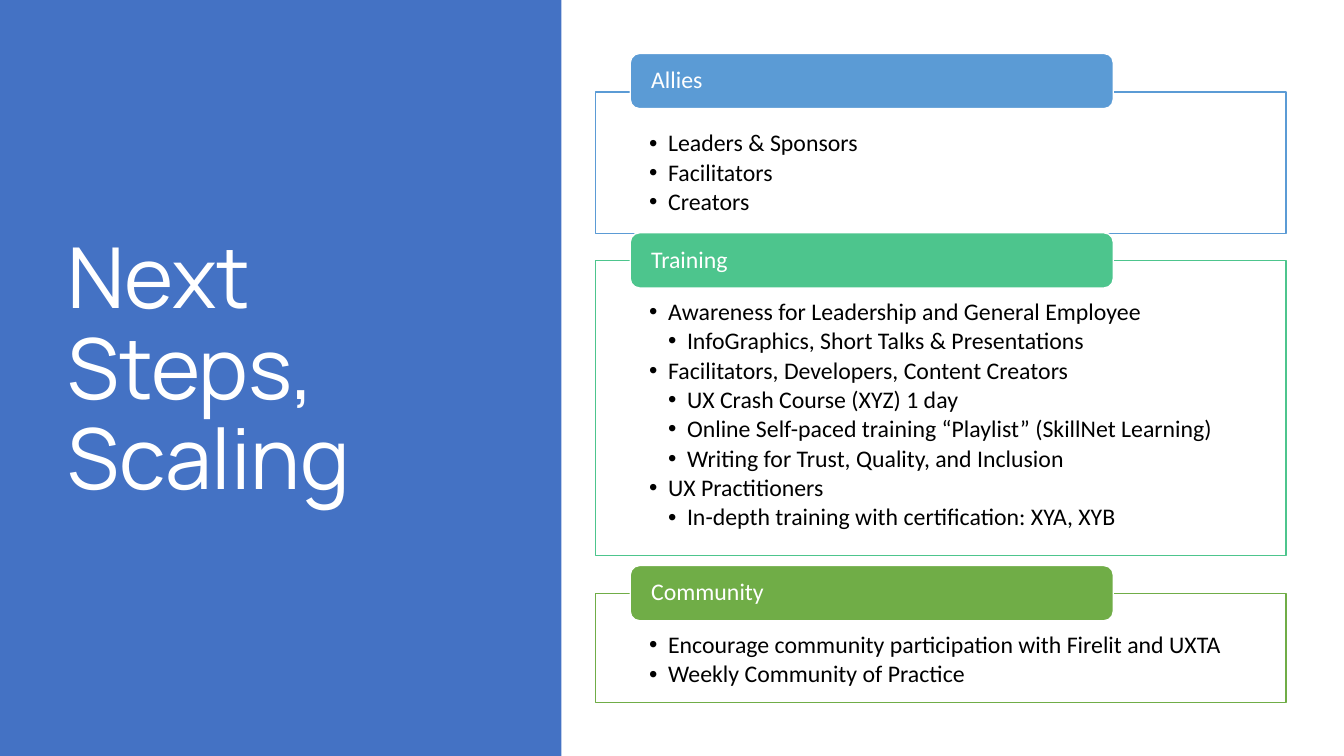
from lxml.etree import SubElement
from pptx import Presentation
from pptx.dml.color import RGBColor
from pptx.enum.shapes import MSO_SHAPE as Shape
from pptx.enum.text import MSO_ANCHOR as Anchor, PP_ALIGN as Align
from pptx.oxml.ns import qn
from pptx.util import Pt

WHITE, BLACK, BLUE = "FFFFFF", "000000", "4472C4"
PANEL_LEFT, PANEL_WIDTH = 425.5, 493.2
TAB_LEFT, TAB_WIDTH, TAB_HEIGHT = 450.2, 345, 39.4
BULLET_INDENT = 13.5

SECTIONS = [
    ("Allies", "5B9BD5", 38.2, 65.7, 101.3, [
        (1, "Leaders & Sponsors"),
        (1, "Facilitators"),
        (1, "Creators"),
    ]),
    ("Training", "4DC58D", 166.3, 186, 210.8, [
        (1, "Awareness for Leadership and General Employee"),
        (2, "InfoGraphics, Short Talks & Presentations"),
        (1, "Facilitators, Developers, Content Creators"),
        (2, "UX Crash Course (XYZ) 1 day"),
        (2, "Online Self-paced training “Playlist” (SkillNet Learning)"),
        (2, "Writing for Trust, Quality, and Inclusion"),
        (1, "UX Practitioners"),
        (2, "In-depth training with certification: XYA, XYB"),
    ]),
    ("Community", "70AD47", 404, 424, 77.8, [
        (1, "Encourage community participation with Firelit and UXTA"),
        (1, "Weekly Community of Practice"),
    ]),
]


def color(value):
    return RGBColor.from_string(value)


def add_box(slide, kind, left, top, width, height, fill, line=None):
    shape = slide.shapes.add_shape(kind, Pt(left), Pt(top), Pt(width), Pt(height))
    shape.shadow.inherit = False
    shape.fill.solid()
    shape.fill.fore_color.rgb = color(fill)
    if line:
        shape.line.color.rgb = color(line)
        shape.line.width = Pt(1)
    else:
        shape.line.fill.background()
    return shape


def set_frame(frame, anchor, left, top, right, bottom):
    frame.word_wrap = True
    frame.vertical_anchor = anchor
    frame.margin_left, frame.margin_top = Pt(left), Pt(top)
    frame.margin_right, frame.margin_bottom = Pt(right), Pt(bottom)


def write(paragraph, text, size, font, text_color):
    paragraph.text = text
    paragraph.alignment = Align.LEFT
    paragraph.line_spacing = 0.9
    paragraph.font.size = Pt(size)
    paragraph.font.name = font
    paragraph.font.color.rgb = color(text_color)


def add_bullet(paragraph, level):
    paragraph.level = level
    paragraph.space_after = Pt(2.6)
    properties = paragraph._p.get_or_add_pPr()
    properties.set("marL", str(Pt(BULLET_INDENT * level)))
    properties.set("indent", str(-Pt(BULLET_INDENT)))
    SubElement(properties, qn("a:buFont")).set("typeface", "Arial")
    SubElement(properties, qn("a:buChar")).set("char", "•")


def set_opacity(shape, percent):
    fill_color = shape._element.spPr.find(qn("a:solidFill"))[0]
    SubElement(fill_color, qn("a:alpha")).set("val", str(percent * 1000))


def add_title(slide, text):
    box = slide.shapes.add_textbox(Pt(41), Pt(49), Pt(299.5), Pt(433.4))
    set_frame(box.text_frame, Anchor.MIDDLE, 7.2, 3.6, 7.2, 3.6)
    write(box.text_frame.paragraphs[0], text, 60, "Manrope", WHITE)


def add_panel(slide, top, height, accent, items):
    panel = add_box(slide, Shape.RECTANGLE, PANEL_LEFT, top, PANEL_WIDTH, height, WHITE, accent)
    set_opacity(panel, 90)
    frame = panel.text_frame
    set_frame(frame, Anchor.TOP, 38.2, 28.1, 38.2, 9.4)
    for index, (level, text) in enumerate(items):
        paragraph = frame.add_paragraph() if index else frame.paragraphs[0]
        write(paragraph, text, 17, "Calibri", BLACK)
        add_bullet(paragraph, level)


def add_tab(slide, top, accent, heading):
    tab = add_box(slide, Shape.ROUNDED_RECTANGLE, TAB_LEFT, top, TAB_WIDTH, TAB_HEIGHT, accent, WHITE)
    set_frame(tab.text_frame, Anchor.MIDDLE, 13, 0, 13, 0)
    write(tab.text_frame.paragraphs[0], heading, 17, "Calibri", WHITE)


def main():
    presentation = Presentation()
    presentation.slide_width, presentation.slide_height = Pt(960), Pt(540)
    slide = presentation.slides.add_slide(presentation.slide_layouts[6])
    add_box(slide, Shape.RECTANGLE, 0, 0, 401, 540, BLUE)
    add_title(slide, "Next Steps, Scaling")
    for heading, accent, tab_top, panel_top, panel_height, items in SECTIONS:
        add_panel(slide, panel_top, panel_height, accent, items)
        add_tab(slide, tab_top, accent, heading)
    presentation.save("out.pptx")


if __name__ == "__main__":
    main()
